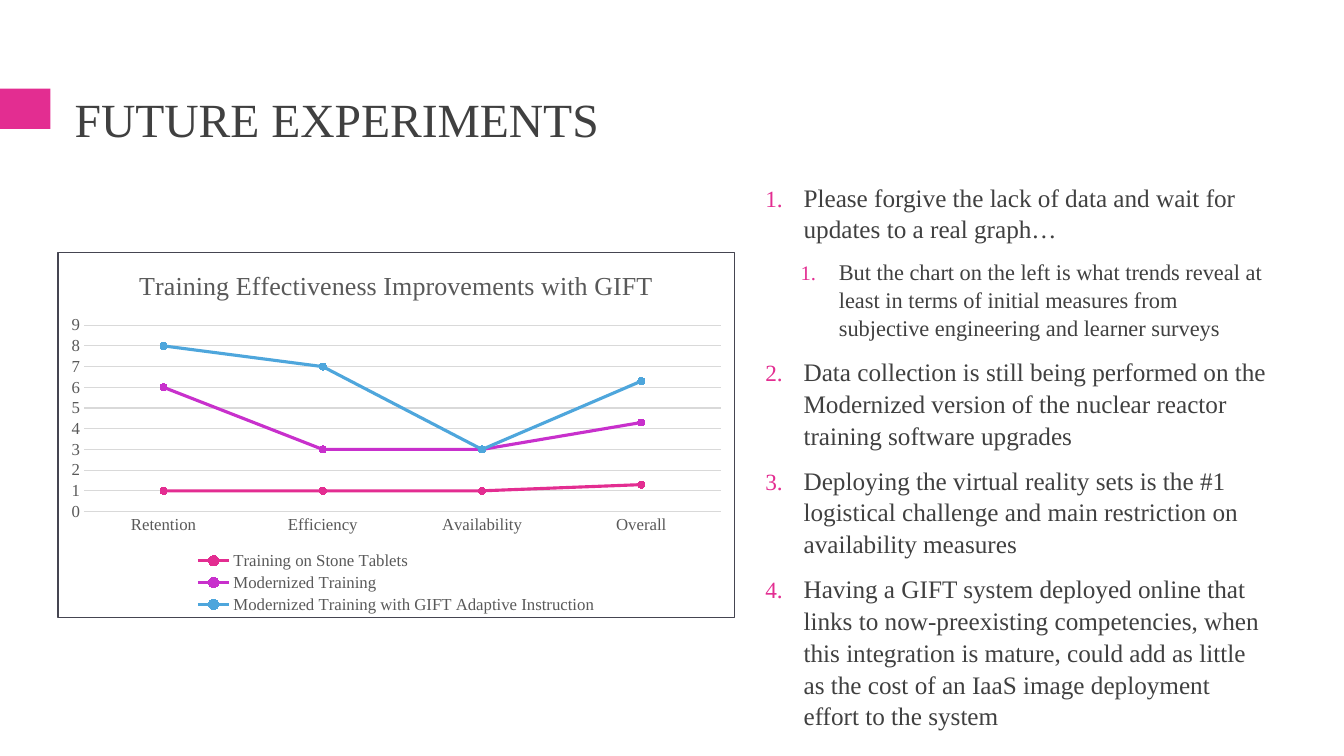
"""Build the Future Experiments slide with a stacked line chart and a numbered list."""
import lxml.etree
import pptx
import pptx.chart.data
import pptx.dml.color
import pptx.enum.chart
import pptx.enum.shapes
import pptx.enum.text
import pptx.oxml
import pptx.oxml.ns
import pptx.util

Inches, Pt = pptx.util.Inches, pptx.util.Pt
FACE, TEXT, GREY, RULE, PINK = "Times New Roman", "404040", "595959", "D9D9D9", "E32D91"


def color(code):
    return pptx.dml.color.RGBColor.from_string(code)


def set_font(font, size, code):
    for name, value in {"name": FACE, "size": Pt(size), "bold": False}.items():
        setattr(font, name, value)
    font.color.rgb = color(code)


prs = pptx.Presentation()
prs.slide_width, prs.slide_height = Inches(13.33), Inches(7.5)
s = prs.slides.add_slide(prs.slide_layouts[1])
title, body = s.placeholders

accent = s.shapes.add_shape(pptx.enum.shapes.MSO_SHAPE.RECTANGLE,
                            0, Inches(0.88), Inches(0.5), Inches(0.4))
accent.shadow.inherit = False
accent.fill.solid()
accent.fill.fore_color.rgb = color(PINK)
accent.line.fill.background()

anchor = pptx.enum.text.MSO_ANCHOR
for sp, box, side in ((title, (0.64, 0.77, 12.06, 0.81), anchor.MIDDLE),
                      (body, (7.49, 1.74, 5.21, 5.35), anchor.TOP)):
    for name, value in zip(("left", "top", "width", "height"), box):
        setattr(sp, name, Inches(value))
    tf = sp.text_frame
    for name, value in {"word_wrap": True, "vertical_anchor": side,
                        "auto_size": pptx.enum.text.MSO_AUTO_SIZE.NONE}.items():
        setattr(tf, name, value)

p = title.text_frame.paragraphs[0]
p.alignment = pptx.enum.text.PP_ALIGN.LEFT
r = p.add_run()
r.text = "FUTURE EXPERIMENTS"
set_font(r.font, 34, TEXT)

items = (
    (0, "Please forgive the lack of data and wait for updates to a real graph…"),
    (1, "But the chart on the left is what trends reveal at least in terms of initial "
        "measures from subjective engineering and learner surveys"),
    (0, "Data collection is still being performed on the Modernized version of the "
        "nuclear reactor training software upgrades"),
    (0, "Deploying the virtual reality sets is the #1 logistical challenge and main "
        "restriction on availability measures"),
    (0, "Having a GIFT system deployed online that links to now-preexisting competencies, "
        "when this integration is mature, could add as little as the cost of an IaaS image "
        "deployment effort to the system"),
)
ns = pptx.oxml.ns.nsdecls("a")
numbering = (f'<a:buClr {ns}><a:srgbClr val="{PINK}"/></a:buClr>',
             f'<a:buSzPct {ns} val="92000"/>',
             f'<a:buFont {ns} typeface="+mj-lt"/>',
             f'<a:buAutoNum {ns} type="arabicPeriod"/>')
tf = body.text_frame
for i, (level, text) in enumerate(items):
    p = tf.add_paragraph() if i else tf.paragraphs[0]
    size = 18 - 2 * level
    for name, value in {"level": level, "line_spacing": 1.05, "space_after": Pt(6),
                        "space_before": Pt(0.2 * size if i else 0)}.items():
        setattr(p, name, value)
    pPr = p._p.get_or_add_pPr()
    pPr.set("marL", str(Inches(0.38 + 0.35 * level)))
    pPr.set("indent", str(Inches(-0.38)))
    for xml in numbering:
        pPr.append(pptx.oxml.parse_xml(xml))
    r = p.add_run()
    r.text = text
    set_font(r.font, size, TEXT)

series = (
    ("Training on Stone Tablets", (1, 1, 1, 1.3), PINK),
    ("Modernized Training", (5, 2, 2, 3), "C830CC"),
    ("Modernized Training with GIFT Adaptive Instruction", (2, 4, 0, 2), "4EA6DC"),
)
data = pptx.chart.data.CategoryChartData()
data.categories = ("Retention", "Efficiency", "Availability", "Overall")
for name, values, code in series:
    data.add_series(name, values)
chart = s.shapes.add_chart(pptx.enum.chart.XL_CHART_TYPE.LINE_MARKERS_STACKED,
                           Inches(0.57), Inches(2.5), Inches(6.72), Inches(3.63), data).chart
set_font(chart.font, 10, "000000")
chart.has_title = True
p = chart.chart_title.text_frame.paragraphs[0]
r = p.add_run()
r.text = "Training Effectiveness Improvements with GIFT"
set_font(r.font, 18.6, GREY)

chart.has_legend = True
chart.legend.position = pptx.enum.chart.XL_LEGEND_POSITION.BOTTOM
chart.legend.include_in_layout = False
set_font(chart.legend.font, 12, GREY)

cat_axis, val_axis = chart.category_axis, chart.value_axis
for axis in (cat_axis, val_axis):
    axis.major_tick_mark = axis.minor_tick_mark = pptx.enum.chart.XL_TICK_MARK.NONE
    set_font(axis.tick_labels.font, 12, GREY)
for name, value in {"minimum_scale": 0, "maximum_scale": 9, "major_unit": 1,
                    "has_major_gridlines": True}.items():
    setattr(val_axis, name, value)
val_axis.format.line.fill.background()
for line in (cat_axis.format.line, val_axis.major_gridlines.format.line):
    line.color.rgb = color(RULE)
    line.width = Pt(0.75)

plot = chart.plots[0]
plot.vary_by_categories = False
for ser, (name, values, code) in zip(plot.series, series):
    ser.smooth = False
    ser.format.line.color.rgb = color(code)
    ser.format.line.width = Pt(2.25)
    ser.marker.style = pptx.enum.chart.XL_MARKER_STYLE.CIRCLE
    ser.marker.size = 5
    ser.marker.format.fill.solid()
    ser.marker.format.fill.fore_color.rgb = color(code)
    ser.marker.format.line.color.rgb = color(code)

border = pptx.oxml.parse_xml(
    f'<c:spPr {pptx.oxml.ns.nsdecls("c", "a")}><a:noFill/><a:ln w="{Pt(0.75)}"><a:solidFill>'
    '<a:srgbClr val="454551"/></a:solidFill></a:ln></c:spPr>')
chart._chartSpace.find(pptx.oxml.ns.qn("c:chart")).addnext(border)

prs.save("out.pptx")
